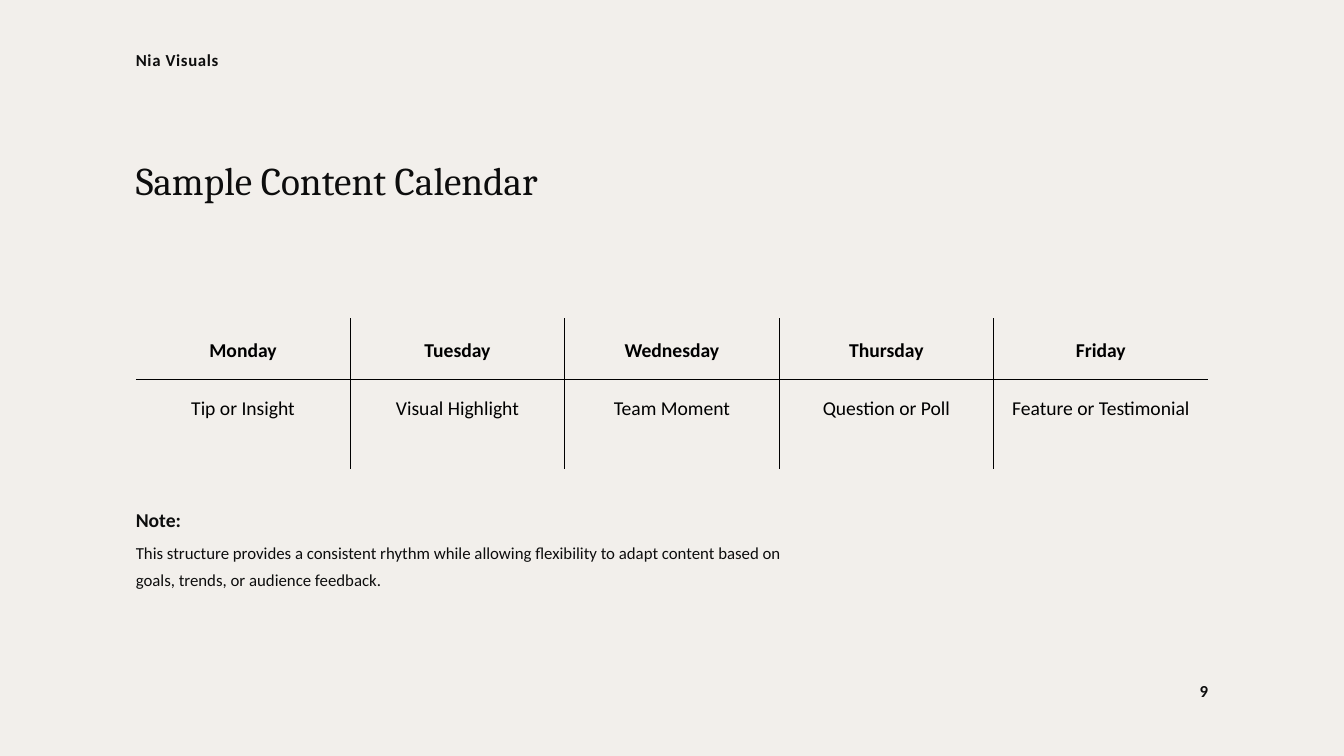
from lxml.etree import SubElement
from pptx import Presentation
from pptx.dml.color import RGBColor
from pptx.enum.text import MSO_ANCHOR as ANCHOR, MSO_AUTO_SIZE as AUTO, PP_ALIGN as ALIGN
from pptx.oxml import parse_xml
from pptx.oxml.ns import nsdecls, qn
from pptx.util import Pt

COLORS = {"background": "F2EFEB", "ink": "0D0D0D", "table": "000000"}
BODY, HEADING = "Calibri", "Cambria"
LEFT, WIDTH = 145.5, 1149
CALENDAR = [
    ("Monday", "Tip or Insight"),
    ("Tuesday", "Visual Highlight"),
    ("Wednesday", "Team Moment"),
    ("Thursday", "Question or Poll"),
    ("Friday", "Feature or Testimonial"),
]
ROW_HEIGHTS = (65, 97)


def write(tf, text, size, leading, align=ALIGN.LEFT, font=BODY, color="ink",
          bold=False, tracking=0):
    """Put one formatted run into the frame's first paragraph."""
    tf.word_wrap = True
    p = tf.paragraphs[0]
    p.alignment, p.line_spacing = align, Pt(leading)
    r = p.add_run()
    r.text = text
    r.font.name, r.font.size, r.font.bold = font, Pt(size), bold
    r.font.color.rgb = RGBColor.from_string(COLORS[color])
    if tracking:
        r.font._element.set("spc", str(int(tracking * 100)))


def reset_frame(tf):
    tf.margin_left = tf.margin_top = tf.margin_right = tf.margin_bottom = 0
    tf.vertical_anchor = ANCHOR.TOP
    tf.auto_size = AUTO.NONE


def add_title(slide, text, top, width, height):
    sp = slide.shapes.title
    sp.left, sp.top, sp.width, sp.height = Pt(LEFT), Pt(top), Pt(width), Pt(height)
    reset_frame(sp.text_frame)
    write(sp.text_frame, text, 42, 42, font=HEADING)


def add_text(slide, text, left, top, width, height, size, leading, **style):
    sp = slide.shapes.add_textbox(Pt(left), Pt(top), Pt(width), Pt(height))
    reset_frame(sp.text_frame)
    write(sp.text_frame, text, size, leading, **style)


def set_borders(cell, visible):
    """Rule the sides named in visible and clear the others."""
    tc_pr = cell._tc.get_or_add_tcPr()
    for i, side in enumerate("LRTB"):
        ln = parse_xml(f'<a:ln{side} {nsdecls("a")} w="{Pt(0.75)}"/>')
        if side in visible:
            fill = SubElement(ln, qn("a:solidFill"))
            SubElement(fill, qn("a:srgbClr"), val=COLORS["table"])
        else:
            SubElement(ln, qn("a:noFill"))
        tc_pr.insert(i, ln)


def add_calendar(slide, top):
    days = len(CALENDAR)
    frame = slide.shapes.add_table(len(ROW_HEIGHTS), days, Pt(LEFT), Pt(top),
                                   Pt(WIDTH), Pt(sum(ROW_HEIGHTS)))
    table = frame.table
    table.first_row = table.horz_banding = False
    for row, height in zip(table.rows, ROW_HEIGHTS):
        row.height = Pt(height)
    for col, entries in enumerate(CALENDAR):
        table.columns[col].width = Pt(WIDTH / days)
        for row, text in enumerate(entries):
            header = row == 0
            cell = table.cell(row, col)
            cell.fill.background()
            cell.margin_left = cell.margin_right = Pt(15)
            cell.margin_top = cell.margin_bottom = Pt(15)
            cell.vertical_anchor = ANCHOR.MIDDLE if header else ANCHOR.TOP
            write(cell.text_frame, text, 21, 29.4, align=ALIGN.CENTER,
                  color="table", bold=header)
            # Inner rules only
            visible = "B" if header else "T"
            visible += "L" if col > 0 else ""
            visible += "R" if col < days - 1 else ""
            set_borders(cell, visible)


def main():
    prs = Presentation()
    prs.slide_width, prs.slide_height = Pt(1440), Pt(810)
    slide = prs.slides.add_slide(prs.slide_layouts[5])
    slide.background.fill.solid()
    slide.background.fill.fore_color.rgb = RGBColor.from_string(COLORS["background"])

    # Title and weekly calendar
    add_title(slide, "Sample Content Calendar", 175.5, 504, 44.5)
    add_calendar(slide, 341)

    # Running header and page number
    label = {"size": 18, "leading": 25.2, "bold": True, "tracking": 0.7}
    add_text(slide, "Nia Visuals", LEFT, 49.5, 343.5, 49, align=ALIGN.JUSTIFY, **label)
    add_text(slide, "9", LEFT + WIDTH - 343.5, 726, 343.5, 24.5,
             align=ALIGN.RIGHT, **label)

    # Note
    add_text(slide, "Note:", LEFT, 539.5, 720.5, 29, 21, 29.4, bold=True)
    add_text(slide, "This structure provides a consistent rhythm while allowing "
             "flexibility to adapt content based on goals, trends, or audience "
             "feedback.", LEFT, 574, 720.5, 55, 18, 28.8)

    prs.save("out.pptx")


if __name__ == "__main__":
    main()
